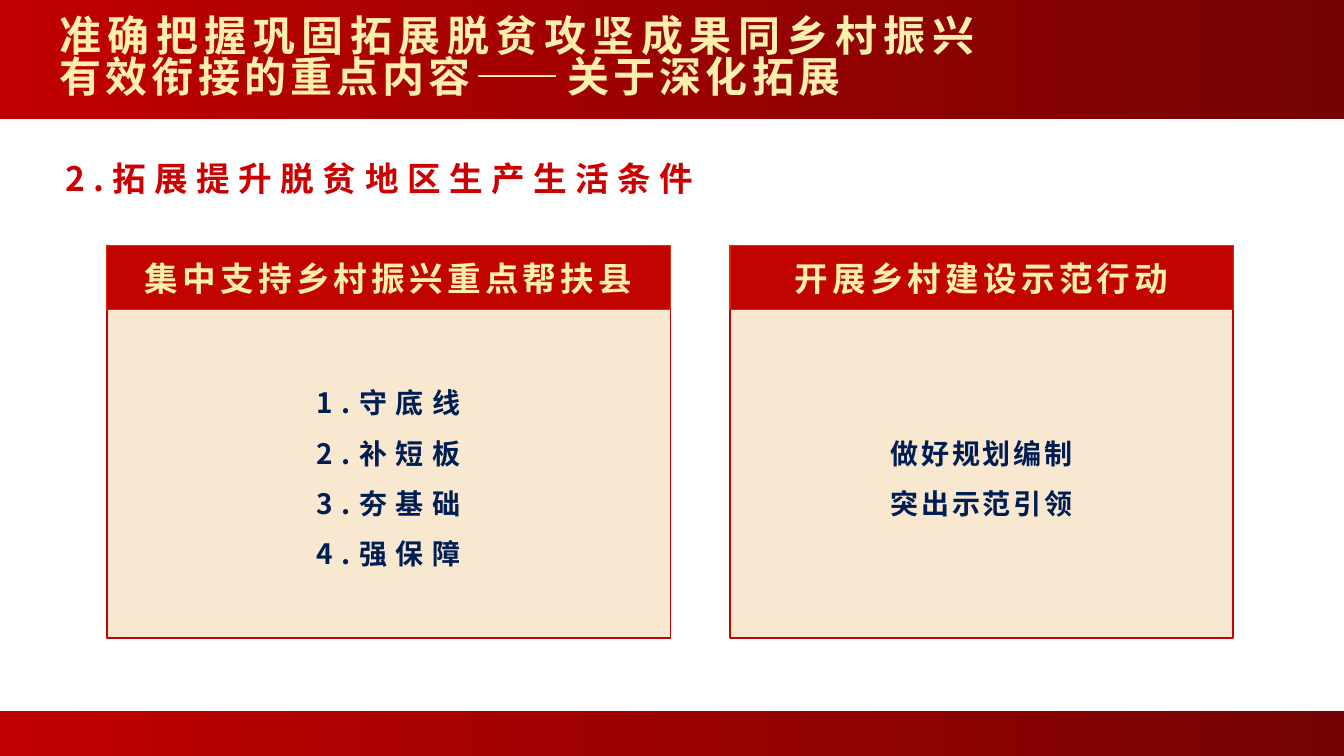
from dataclasses import dataclass

from lxml.etree import SubElement
from pptx import Presentation
from pptx.dml.color import RGBColor
from pptx.enum.lang import MSO_LANGUAGE_ID
from pptx.enum.shapes import MSO_SHAPE
from pptx.enum.text import MSO_ANCHOR, MSO_AUTO_SIZE, PP_ALIGN
from pptx.oxml.ns import qn
from pptx.util import Inches, Pt


@dataclass(frozen=True)
class Theme:
    font: str = "Noto Sans CJK SC"
    red: RGBColor = RGBColor(0xC0, 0x00, 0x00)
    dark_red: RGBColor = RGBColor(0x76, 0x03, 0x03)
    heading_red: RGBColor = RGBColor(0xCC, 0x00, 0x00)
    card_red: RGBColor = RGBColor(0xC2, 0x04, 0x00)
    header_edge: RGBColor = RGBColor(0xDC, 0x2C, 0x00)
    cream: RGBColor = RGBColor(0xF9, 0xE8, 0xD0)
    gold: RGBColor = RGBColor(0xFE, 0xEF, 0xAC)
    navy: RGBColor = RGBColor(0x00, 0x1D, 0x54)
    title_size: Pt = Pt(30)
    heading_size: Pt = Pt(24)
    body_size: Pt = Pt(20)


theme = Theme()


def write_lines(shape, lines, size, color, tracking, align, line_spacing, insets=(0.1, 0.05)):
    """Fill a shape with bold paragraphs; tracking is in points, insets are side and top/bottom inches."""
    frame = shape.text_frame
    side, edge = map(Inches, insets)
    frame_format = {
        "word_wrap": True,
        "auto_size": MSO_AUTO_SIZE.NONE,
        "vertical_anchor": MSO_ANCHOR.MIDDLE,
        "margin_left": side,
        "margin_right": side,
        "margin_top": edge,
        "margin_bottom": edge,
    }
    for name, value in frame_format.items():
        setattr(frame, name, value)
    run_format = {
        "name": theme.font,
        "size": size,
        "bold": True,
        "language_id": MSO_LANGUAGE_ID.SIMPLIFIED_CHINESE,
    }
    for index, line in enumerate(lines):
        paragraph = frame.add_paragraph() if index else frame.paragraphs[0]
        paragraph.alignment = align
        paragraph.line_spacing = line_spacing
        run = paragraph.add_run()
        run.text = line
        for name, value in run_format.items():
            setattr(run.font, name, value)
        run.font.color.rgb = color
        properties = run._r.get_or_add_rPr()
        properties.set("spc", str(tracking * 100))
        SubElement(properties, qn("a:ea"), typeface=theme.font)


presentation = Presentation()
presentation.slide_width = Inches(13.33)
presentation.slide_height = Inches(7.5)
slide = presentation.slides.add_slide(presentation.slide_layouts[5])
title = slide.shapes.title

# Top and bottom bands, kept behind the title
for index, (top, height) in enumerate([(0, 1.18), (7.05, 0.45)]):
    band = slide.shapes.add_shape(
        MSO_SHAPE.RECTANGLE, 0, Inches(top), Inches(13.33), Inches(height))
    band.shadow.inherit = False
    band.line.fill.background()
    band.fill.gradient()
    band.fill.gradient_angle = 0
    for stop, color, position in zip(
            band.fill.gradient_stops, (theme.red, theme.dark_red), (0, 1)):
        stop.color.rgb = color
        stop.position = position
    title._element.addprevious(band._element)

# Title and section heading
title_box = {"left": 0, "top": 0.08, "width": 9.79, "height": 1.02}
for name, value in title_box.items():
    setattr(title, name, Inches(value))
write_lines(title, ["准确把握巩固拓展脱贫攻坚成果同乡村振兴有效衔接的重点内容——关于深化拓展"],
            theme.title_size, theme.gold, 3, PP_ALIGN.JUSTIFY, 0.82, (0.08, 0.04))
title.text_frame.margin_left = Inches(0.59)

heading = slide.shapes.add_textbox(Inches(0.55), Inches(1.44), Inches(6.53), Inches(0.58))
write_lines(heading, ["2.拓展提升脱贫地区生产生活条件"],
            theme.heading_size, theme.heading_red, 6, PP_ALIGN.LEFT, 1.2)
heading.text_frame.word_wrap = False

# Cards: left, width, header, points, tracking of the points
cards = [
    (1.06, 5.59, "集中支持乡村振兴重点帮扶县",
     ["1.守底线", "2.补短板", "3.夯基础", "4.强保障"], 6),
    (7.24, 4.99, "开展乡村建设示范行动",
     ["做好规划编制", "突出示范引领"], 2),
]
for left, width, header_text, points, tracking in cards:
    card = slide.shapes.add_group_shape().shapes
    left, width = Inches(left), Inches(width)
    panel = card.add_shape(
        MSO_SHAPE.FLOWCHART_PROCESS, left, Inches(2.45), width, Inches(3.88))
    header = card.add_shape(MSO_SHAPE.RECTANGLE, left, Inches(2.44), width, Inches(0.63))
    for shape, fill, edge, weight in [
        (panel, theme.cream, theme.card_red, 1),
        (header, theme.card_red, theme.header_edge, 0.75),
    ]:
        shape.shadow.inherit = False
        shape.fill.solid()
        shape.fill.fore_color.rgb = fill
        shape.line.color.rgb = edge
        shape.line.width = Pt(weight)
    write_lines(header, [header_text], theme.heading_size, theme.gold, 3, PP_ALIGN.CENTER, 1.0)
    body = card.add_textbox(left, Inches(3.07), width, Inches(3.18))
    write_lines(body, points, theme.body_size, theme.navy, tracking,
                PP_ALIGN.CENTER, 1.5, (0.2, 0.05))

presentation.save("out.pptx")
